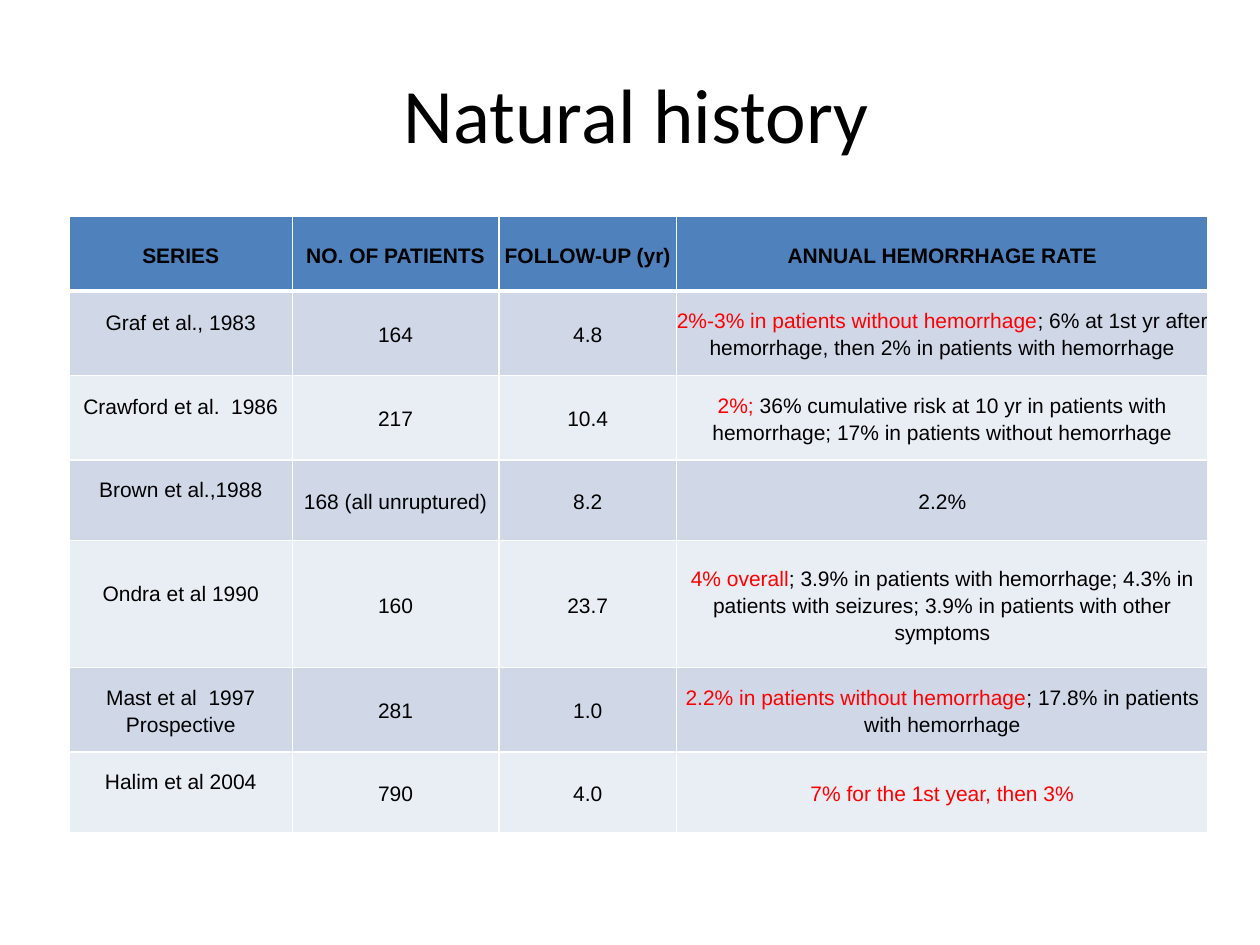
from lxml import etree
from pptx import Presentation
from pptx.dml.color import RGBColor
from pptx.enum.text import MSO_ANCHOR, PP_ALIGN
from pptx.oxml.ns import qn
from pptx.util import Inches, Pt

CENTER = PP_ALIGN.CENTER
MIDDLE = MSO_ANCHOR.MIDDLE
BLACK = RGBColor(0x00, 0x00, 0x00)
RED = RGBColor(0xFF, 0x00, 0x00)
WHITE = RGBColor(0xFF, 0xFF, 0xFF)
HEADER_FILL = RGBColor(0x4F, 0x81, 0xBD)
BAND_FILLS = [RGBColor(0xE9, 0xED, 0xF4), RGBColor(0xD0, 0xD8, 0xE8)]

COL_WIDTHS = [1.77, 1.64, 1.41, 4.22]
ROW_HEIGHTS = [0.59, 0.67, 0.67, 0.64, 1.01, 0.67, 0.64]
HEADERS = ["SERIES", "NO. OF PATIENTS", "FOLLOW-UP (yr)", "ANNUAL HEMORRHAGE RATE"]
# Series, patients, follow-up, then the red and black parts of the rate
STUDIES = [
    ("Graf et al., 1983", "164", "4.8", "2%-3% in patients without hemorrhage",
     "; 6% at 1st yr after hemorrhage, then 2% in patients with hemorrhage"),
    ("Crawford et al.  1986", "217", "10.4", "2%; ",
     "36% cumulative risk at 10 yr in patients with hemorrhage; "
     "17% in patients without hemorrhage"),
    ("Brown et al.,1988", "168 (all unruptured)", "8.2", "", "2.2%"),
    ("Ondra et al 1990", "160", "23.7", "4% overall",
     "; 3.9% in patients with hemorrhage; 4.3% in patients with seizures; "
     "3.9% in patients with other symptoms"),
    ("Mast et al  1997\vProspective", "281", "1.0",
     "2.2% in patients without hemorrhage", "; 17.8% in patients with hemorrhage"),
    ("Halim et al 2004", "790", "4.0", "7% for the 1st year, then 3%", ""),
]


def set_border(cell, side, width):
    ln = etree.SubElement(cell._tc.get_or_add_tcPr(), qn("a:ln" + side), w=str(Pt(width)))
    fill = etree.SubElement(ln, qn("a:solidFill"))
    etree.SubElement(fill, qn("a:srgbClr"), val=str(WHITE))


def format_cell(cell, fill, top, bottom):
    cell.margin_left = cell.margin_right = cell.margin_top = cell.margin_bottom = 0
    cell.vertical_anchor = MIDDLE
    for side, width in (("L", 1), ("R", 1), ("T", top), ("B", bottom)):
        set_border(cell, side, width)
    cell.fill.solid()
    cell.fill.fore_color.rgb = fill
    p = cell.text_frame.paragraphs[0]
    p.alignment = CENTER
    p.line_spacing = 1.15
    p.font.size = Pt(12)
    for r in p.runs:
        r.font.name = "Arial"
        r.font.size = Pt(12)
        r.font.bold = False
        r.font.color.rgb = BLACK
    return p


prs = Presentation()
prs.slide_width, prs.slide_height = Inches(10), Inches(7.5)
s = prs.slides.add_slide(prs.slide_layouts[5])

# Title
title = s.shapes.title
title.left, title.top = Inches(0.55), Inches(0.27)
title.width, title.height = Inches(9), Inches(1.25)
tf = title.text_frame
tf.text = "Natural history"
tf.vertical_anchor = MIDDLE
p = tf.paragraphs[0]
p.alignment = CENTER
r = p.runs[0]
r.font.name, r.font.size = "Calibri", Pt(44)
r.font.color.rgb = BLACK

# Table grid
table = s.shapes.add_table(
    len(ROW_HEIGHTS), len(COL_WIDTHS), Inches(0.55), Inches(1.72),
    Inches(sum(COL_WIDTHS)), Inches(sum(ROW_HEIGHTS))).table
for col, width in zip(table.columns, COL_WIDTHS):
    col.width = Inches(width)
for row, height in zip(table.rows, ROW_HEIGHTS):
    row.height = Inches(height)

# Header row
for j, header in enumerate(HEADERS):
    cell = table.cell(0, j)
    cell.text = header
    p = format_cell(cell, HEADER_FILL, 1, 3)
    p.runs[0].font.bold = True

# Study rows
for i, (series, patients, years, red, black) in enumerate(STUDIES, start=1):
    for j, text in enumerate([series, patients, years, red + black]):
        cell = table.cell(i, j)
        if j == 3 and red:
            p = cell.text_frame.paragraphs[0]
            for part in filter(None, (red, black)):
                p.add_run().text = part
        else:
            cell.text = text
        p = format_cell(cell, BAND_FILLS[i % 2], 3 if i == 1 else 1, 1)
        p.space_before = p.space_after = Pt(12)
        if j == 3 and red:
            p.runs[0].font.color.rgb = RED
    # Single-line series names sit slightly above the middle
    if "\v" not in series:
        table.cell(i, 0).margin_bottom = Inches(0.19)

prs.save("out.pptx")
